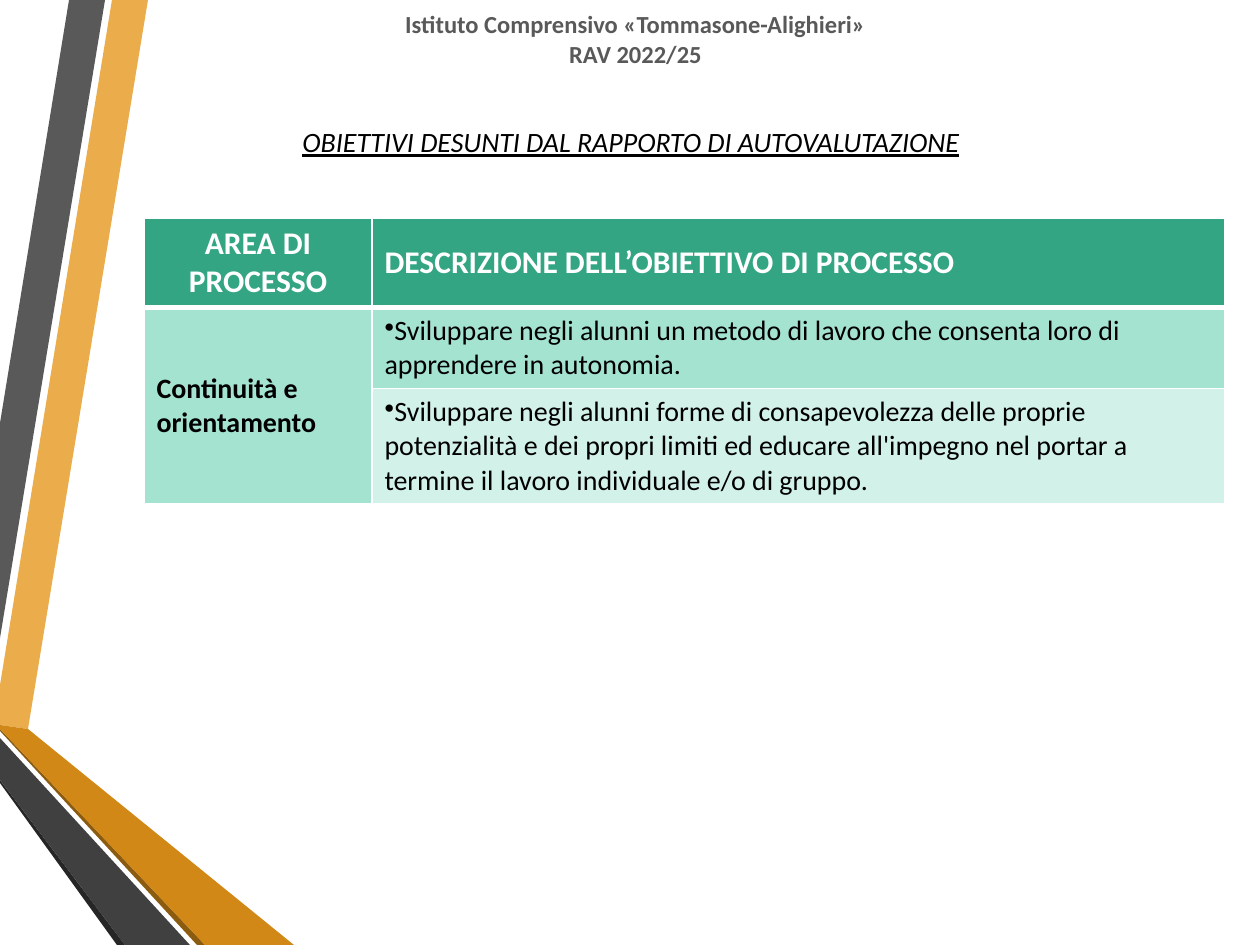
import pptx
import pptx.dml.color
import pptx.enum.text
import pptx.oxml
import pptx.oxml.ns
import pptx.util

EMU_PER_PX = 914400 / 126
FONT = "Calibri"
ALIGN = pptx.enum.text.PP_ALIGN
ANCHOR = pptx.enum.text.MSO_ANCHOR

COLORS = {
    "black": "000000",
    "white": "FFFFFF",
    "grey": "595959",
    "dark grey": "404040",
    "charcoal": "262626",
    "light amber": "EBAC4B",
    "amber": "D18817",
    "brown": "8B5B10",
    "header": "33A583",
    "mint": "A5E3D1",
    "pale mint": "D2F1E8",
}

# Ribbons on the left edge, from back to front: colour and corners in px
RIBBONS = [
    ("light amber", [(0, 685), (0, 725), (28, 729), (148, 0), (112, 0)]),
    ("grey", [(105, 0), (69, 0), (0, 423), (0, 638)]),
    ("charcoal", [(0, 780), (0, 783), (117, 945), (125, 945)]),
    ("brown", [(0, 729), (0, 731), (197, 945), (205, 945)]),
    ("amber", [(0, 729), (205, 945), (294, 945), (28, 729), (0, 725)]),
    ("dark grey", [(0, 780), (125, 945), (190, 945), (0, 738)]),
]

HEADINGS = ["AREA DI PROCESSO", "DESCRIZIONE DELL’OBIETTIVO DI PROCESSO"]
AREA = "Continuità e orientamento"
GOALS = [
    "Sviluppare negli alunni un metodo di lavoro che consenta loro di "
    "apprendere in autonomia.",
    "Sviluppare negli alunni forme di consapevolezza delle proprie "
    "potenzialità e dei propri limiti ed educare all'impegno nel portar a "
    "termine il lavoro individuale e/o di gruppo.",
]
COLUMN_WIDTHS = [228, 853]
ROW_HEIGHTS = [87, 80, 114]


def px(length):
    return pptx.util.Emu(round(length * EMU_PER_PX))


def rgb(name):
    return pptx.dml.color.RGBColor.from_string(COLORS[name])


def style_paragraph(para, size, color, bold=False, align=ALIGN.LEFT):
    para.alignment = align
    para.font.name = FONT
    para.font.size = pptx.util.Pt(size)
    para.font.bold = bold
    para.font.color.rgb = rgb(color)


def add_ribbon(page, color, corners):
    builder = page.shapes.build_freeform(*corners[0], scale=EMU_PER_PX)
    builder.add_line_segments(corners[1:], close=True)
    ribbon = builder.convert_to_shape()
    ribbon.shadow.inherit = False
    ribbon.fill.solid()
    ribbon.fill.fore_color.rgb = rgb(color)
    ribbon.line.fill.background()


def set_title(page, text):
    title = page.shapes.title
    title.left, title.top, title.width, title.height = map(px, (115, 118, 1032, 47))
    frame = title.text_frame
    frame.text = text
    frame.word_wrap = True
    frame.auto_size = pptx.enum.text.MSO_AUTO_SIZE.NONE
    frame.vertical_anchor = ANCHOR.TOP
    para = frame.paragraphs[0]
    style_paragraph(para, 16, "black", align=ALIGN.CENTER)
    para.font.italic = True
    para.font.underline = True


def add_school_heading(page, lines):
    box = page.shapes.add_textbox(*map(px, (144, 3, 983, 72)))
    frame = box.text_frame
    frame.word_wrap = True
    frame.text = "\n".join(lines)
    for para in frame.paragraphs:
        style_paragraph(para, 14, "grey", bold=True, align=ALIGN.CENTER)


def set_borders(cell, top=1, bottom=1):
    properties = cell._tc.get_or_add_tcPr()
    widths = {"lnL": 1, "lnR": 1, "lnT": top, "lnB": bottom}
    for position, (side, width) in enumerate(widths.items()):
        line = pptx.oxml.parse_xml(
            f'<a:{side} {pptx.oxml.ns.nsdecls("a")} w="{pptx.util.Pt(width)}">'
            f'<a:solidFill><a:srgbClr val="{COLORS["white"]}"/></a:solidFill>'
            f"</a:{side}>"
        )
        properties.insert(position, line)


def fill_cell(cell, text, fill, **style):
    cell.text = text
    cell.vertical_anchor = ANCHOR.MIDDLE
    cell.fill.solid()
    cell.fill.fore_color.rgb = rgb(fill)
    para = cell.text_frame.paragraphs[0]
    style_paragraph(para, **style)
    return para


def add_bullet(para):
    properties = para._p.get_or_add_pPr()
    properties.append(
        pptx.oxml.parse_xml(f'<a:buChar {pptx.oxml.ns.nsdecls("a")} char="•"/>')
    )


def add_goal_table(page):
    table = page.shapes.add_table(
        3, 2, px(144), px(218), px(sum(COLUMN_WIDTHS)), px(sum(ROW_HEIGHTS))
    ).table
    table.first_row = table.horz_banding = False
    for column, width in zip(table.columns, COLUMN_WIDTHS):
        column.width = px(width)
    for row, height in zip(table.rows, ROW_HEIGHTS):
        row.height = px(height)

    # Header row
    for index, (text, align) in enumerate(zip(HEADINGS, (ALIGN.CENTER, ALIGN.LEFT))):
        fill_cell(table.cell(0, index), text, "header",
                  size=18, color="white", bold=True, align=align)

    # Process area, spanning its goals
    table.cell(1, 0).merge(table.cell(2, 0))
    fill_cell(table.cell(1, 0), AREA, "mint", size=16, color="black", bold=True)
    for index, (goal, fill) in enumerate(zip(GOALS, ("mint", "pale mint")), start=1):
        add_bullet(fill_cell(table.cell(index, 1), goal, fill, size=16, color="black"))

    # White rules, thicker under the header
    for index, (top, bottom) in enumerate([(1, 3), (3, 1), (1, 1)]):
        for cell in table.rows[index].cells:
            set_borders(cell, top, bottom)


def main():
    deck = pptx.Presentation()
    deck.slide_width, deck.slide_height = px(1260), px(945)
    page = deck.slides.add_slide(deck.slide_layouts.get_by_name("Title Only"))

    for color, corners in RIBBONS:
        add_ribbon(page, color, corners)
    set_title(page, "OBIETTIVI DESUNTI DAL RAPPORTO DI AUTOVALUTAZIONE")
    add_goal_table(page)
    add_school_heading(
        page, ["Istituto Comprensivo «Tommasone-Alighieri»", "RAV 2022/25"]
    )
    deck.save("out.pptx")


if __name__ == "__main__":
    main()
